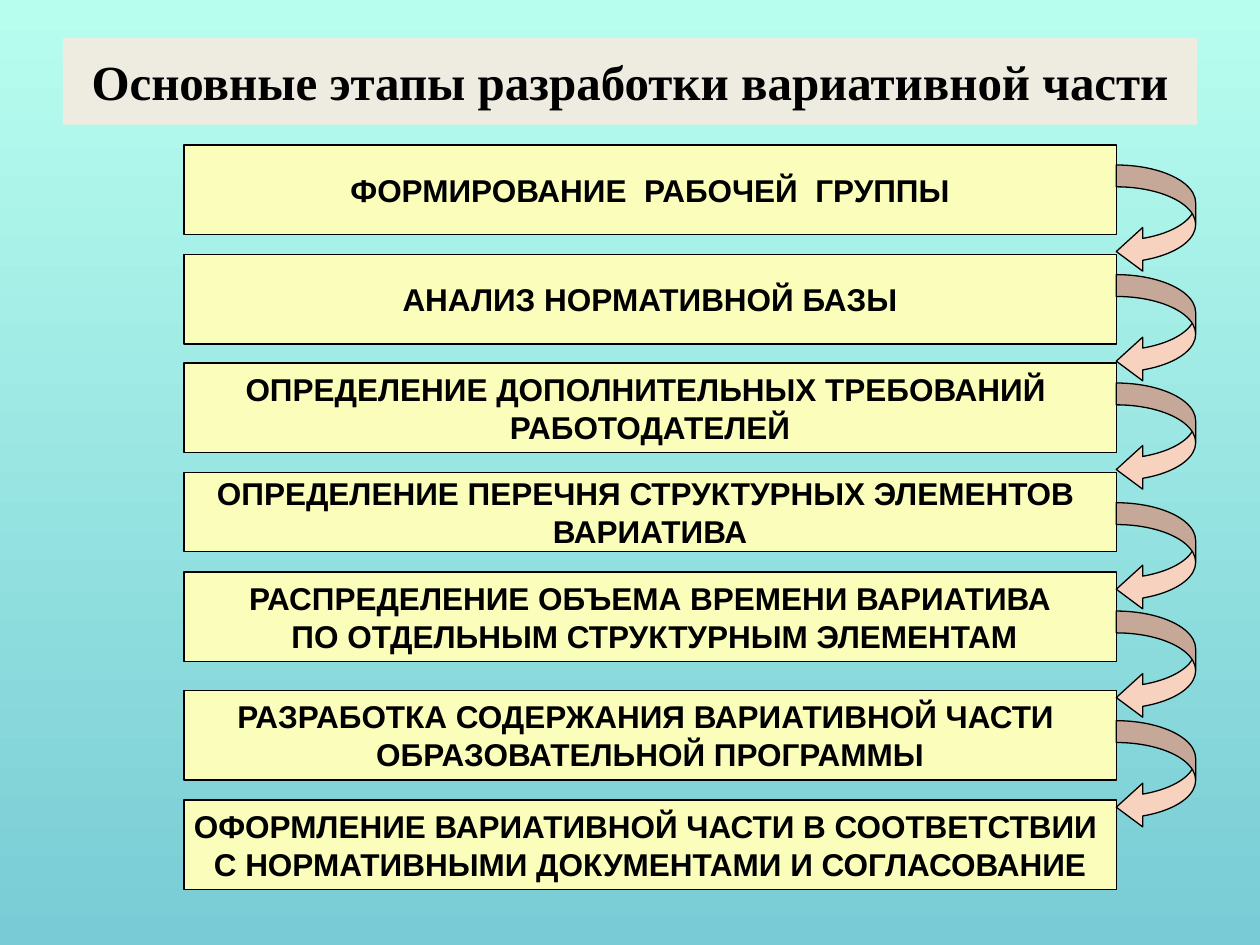
from pptx import Presentation
from pptx.dml.color import RGBColor
from pptx.enum.shapes import MSO_SHAPE
from pptx.enum.text import MSO_ANCHOR, PP_ALIGN
from pptx.util import Inches, Pt

BLACK = RGBColor(0x00, 0x00, 0x00)
TITLE_FILL = RGBColor(0xEE, 0xEC, 0xE1)
STEP_FILL = RGBColor(0xFB, 0xFD, 0xBB)
ARROW_FILL = RGBColor(0xF7, 0xD3, 0xBF)
BACKGROUND_TOP = RGBColor(0xB8, 0xFE, 0xEF)
BACKGROUND_BOTTOM = RGBColor(0x79, 0xCC, 0xD5)

STEP_LEFT, STEP_WIDTH = 1.46, 7.4
ARROW_WIDTH, ARROW_HEIGHT = 0.63, 0.86

# Top, height and lines of each step
STEPS = [
    (1.15, 0.71, ["ФОРМИРОВАНИЕ  РАБОЧЕЙ  ГРУППЫ"]),
    (2.02, 0.71, ["АНАЛИЗ НОРМАТИВНОЙ БАЗЫ"]),
    (2.88, 0.71, ["ОПРЕДЕЛЕНИЕ ДОПОЛНИТЕЛЬНЫХ ТРЕБОВАНИЙ ", "РАБОТОДАТЕЛЕЙ"]),
    (3.75, 0.63, ["ОПРЕДЕЛЕНИЕ ПЕРЕЧНЯ СТРУКТУРНЫХ ЭЛЕМЕНТОВ ", "ВАРИАТИВА"]),
    (4.54, 0.71, ["РАСПРЕДЕЛЕНИЕ ОБЪЕМА ВРЕМЕНИ ВАРИАТИВА",
                  " ПО ОТДЕЛЬНЫМ СТРУКТУРНЫМ ЭЛЕМЕНТАМ"]),
    (5.48, 0.71, ["РАЗРАБОТКА СОДЕРЖАНИЯ ВАРИАТИВНОЙ ЧАСТИ ",
                  "ОБРАЗОВАТЕЛЬНОЙ ПРОГРАММЫ"]),
    (6.35, 0.71, ["ОФОРМЛЕНИЕ ВАРИАТИВНОЙ ЧАСТИ В СООТВЕТСТВИИ ",
                  "С НОРМАТИВНЫМИ ДОКУМЕНТАМИ И СОГЛАСОВАНИЕ"]),
]
ARROW_TOPS = [1.31, 2.18, 3.04, 3.99, 4.85, 5.72]


def paint_background(slide):
    fill = slide.background.fill
    fill.gradient()
    fill.gradient_angle = 270
    for stop, color in zip(fill.gradient_stops, (BACKGROUND_TOP, BACKGROUND_BOTTOM)):
        stop.color.rgb = color


def add_filled_shape(slide, kind, left, top, width, height, color, outlined=True):
    shape = slide.shapes.add_shape(
        kind, Inches(left), Inches(top), Inches(width), Inches(height))
    shape.shadow.inherit = False
    shape.fill.solid()
    shape.fill.fore_color.rgb = color
    if outlined:
        shape.line.color.rgb = BLACK
        shape.line.width = Pt(0.75)
    else:
        shape.line.fill.background()
    return shape


def write_centred(shape, lines, font_name, size, wrap):
    text_frame = shape.text_frame
    text_frame.word_wrap = wrap
    text_frame.vertical_anchor = MSO_ANCHOR.MIDDLE
    text_frame.text = "\n".join(lines)
    for paragraph in text_frame.paragraphs:
        paragraph.alignment = PP_ALIGN.CENTER
        for run in paragraph.runs:
            run.font.name = font_name
            run.font.size = Pt(size)
            run.font.bold = True
            run.font.color.rgb = BLACK


def add_title(slide, left, top, width, height):
    title = add_filled_shape(slide, MSO_SHAPE.RECTANGLE, left, top, width, height,
                             TITLE_FILL, outlined=False)
    write_centred(title, ["Основные этапы разработки вариативной части"],
                  "Times New Roman", 28, wrap=True)


def add_steps(slide, left, width):
    for top, height, lines in STEPS:
        step = add_filled_shape(slide, MSO_SHAPE.RECTANGLE, left, top, width, height,
                                STEP_FILL)
        write_centred(step, lines, "Arial", 18, wrap=False)


def add_arrows(slide, left):
    """Lead from each step to the next along the right side."""
    for top in ARROW_TOPS:
        arrow = add_filled_shape(slide, MSO_SHAPE.CURVED_LEFT_ARROW, left, top,
                                 ARROW_WIDTH, ARROW_HEIGHT, ARROW_FILL)
        for index, value in enumerate((0.275, 0.55, 0.333)):
            arrow.adjustments[index] = value


def main():
    presentation = Presentation()
    presentation.slide_width = Inches(10)
    presentation.slide_height = Inches(7.5)
    slide = presentation.slides.add_slide(presentation.slide_layouts[6])
    paint_background(slide)
    add_title(slide, 0.5, 0.3, 9, 0.69)
    add_steps(slide, STEP_LEFT, STEP_WIDTH)
    add_arrows(slide, STEP_LEFT + STEP_WIDTH)
    presentation.save("out.pptx")


if __name__ == "__main__":
    main()
